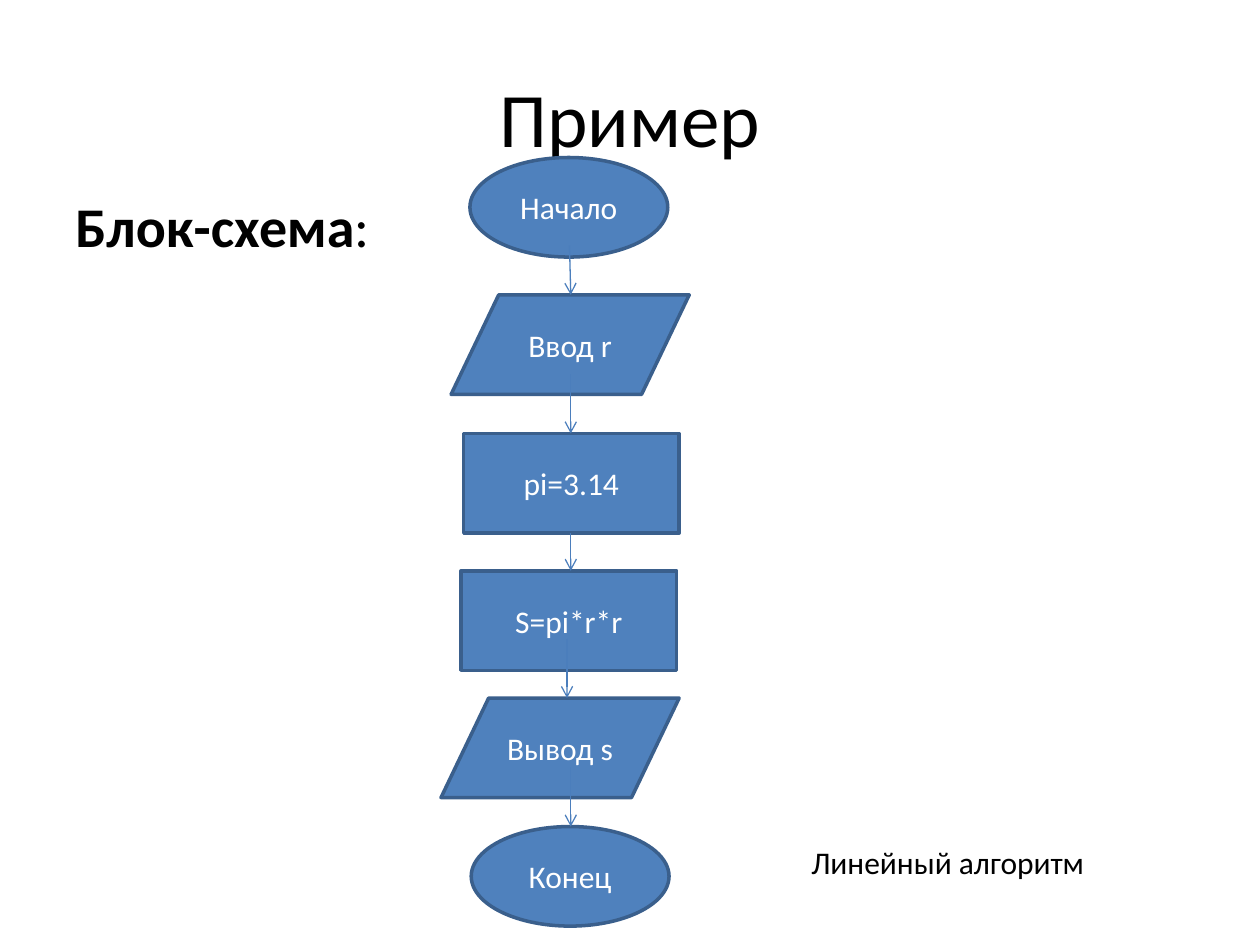
from lxml import etree
from pptx import Presentation
from pptx.dml.color import RGBColor
from pptx.enum.shapes import MSO_CONNECTOR, MSO_SHAPE
from pptx.enum.text import MSO_ANCHOR, PP_ALIGN
from pptx.oxml.ns import qn
from pptx.util import Inches, Pt

TERMINAL = MSO_SHAPE.OVAL
DATA = MSO_SHAPE.FLOWCHART_DATA
PROCESS = MSO_SHAPE.FLOWCHART_PROCESS
STRAIGHT = MSO_CONNECTOR.STRAIGHT
MIDDLE, TOP = MSO_ANCHOR.MIDDLE, MSO_ANCHOR.TOP
CENTER, LEFT = PP_ALIGN.CENTER, PP_ALIGN.LEFT

FONT = "Calibri"
COLORS = {"text": "000000", "fill": "4F81BD", "outline": "3A5F8C",
          "arrow": "4B7EBC", "label": "FFFFFF"}

TEXTS = [
    ([("Пример", False)], (0.5, 0.3, 9, 1.25), 44, CENTER, MIDDLE),
    ([("Блок-схема", True), (":", False)], (0.5, 1.47, 9, 5.91), 32, LEFT, TOP),
    ([("Линейный алгоритм", False)], (6.34, 6.64, 3.15, 0.4), 18, LEFT, TOP),
]
STEPS = [
    ("Начало", TERMINAL, 3.73, 1.25),
    ("Ввод r", DATA, 3.58, 2.34),
    ("pi=3.14", PROCESS, 3.68, 3.44),
    ("S=pi*r*r", PROCESS, 3.66, 4.53),
    ("Вывод s", DATA, 3.5, 5.54),
    ("Конец", TERMINAL, 3.74, 6.56),
]
WIDTHS = {TERMINAL: 1.57, DATA: 1.89, PROCESS: 1.71}
STEP_HEIGHT = 0.79
ARROWS = [
    (4.52, 1.95, 4.53, 2.34),
    (4.53, 2.97, 4.53, 3.44),
    (4.53, 4.23, 4.53, 4.53),
    (4.5, 5.07, 4.5, 5.54),
    (4.53, 6.09, 4.53, 6.56),
]


def rgb(name):
    return RGBColor.from_string(COLORS[name])


def write(tf, runs, size, color, align, anchor):
    tf.word_wrap = True
    tf.vertical_anchor = anchor
    p = tf.paragraphs[0]
    p.alignment = align
    for text, bold in runs:
        r = p.add_run()
        r.text = text
        r.font.name = FONT
        r.font.size = Pt(size)
        r.font.bold = bold
        r.font.color.rgb = rgb(color)


def add_step(slide, text, kind, left, top):
    box = (left, top, WIDTHS[kind], STEP_HEIGHT)
    s = slide.shapes.add_shape(kind, *map(Inches, box))
    s.shadow.inherit = False
    s.fill.solid()
    s.fill.fore_color.rgb = rgb("fill")
    s.line.color.rgb = rgb("outline")
    s.line.width = Pt(2)
    write(s.text_frame, [(text, False)], 18, "label", CENTER, MIDDLE)


def add_arrow(slide, ends):
    c = slide.shapes.add_connector(STRAIGHT, *map(Inches, ends))
    c.line.color.rgb = rgb("arrow")
    c.line.width = Pt(0.75)
    etree.SubElement(c.line._get_or_add_ln(), qn("a:tailEnd"), type="arrow")
    etree.SubElement(c._element.spPr, qn("a:effectLst"))


def main():
    prs = Presentation()
    prs.slide_width, prs.slide_height = Inches(10), Inches(7.5)
    slide = prs.slides.add_slide(prs.slide_layouts[6])
    for runs, box, size, align, anchor in TEXTS:
        tb = slide.shapes.add_textbox(*map(Inches, box))
        write(tb.text_frame, runs, size, "text", align, anchor)
    for step in STEPS:
        add_step(slide, *step)
    for ends in ARROWS:
        add_arrow(slide, ends)
    prs.save("out.pptx")


if __name__ == "__main__":
    main()
